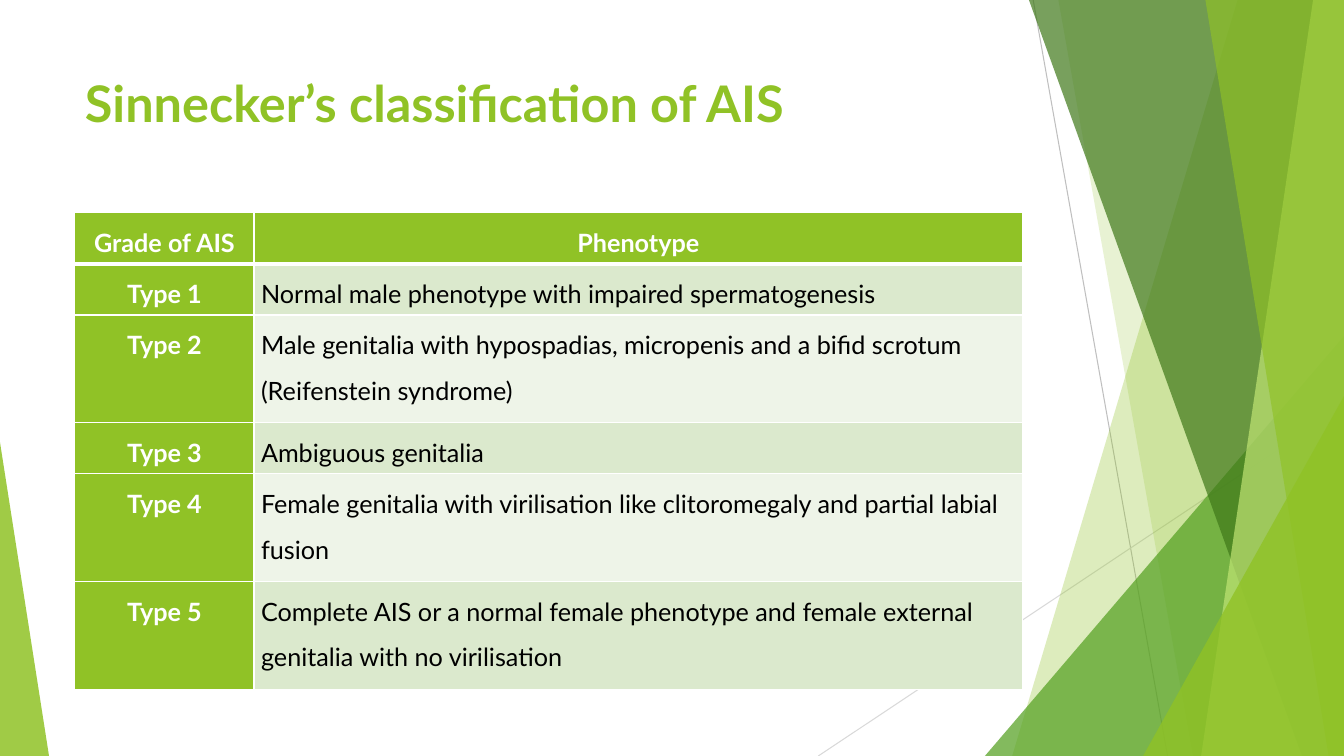
from dataclasses import dataclass
from lxml import etree
from pptx import Presentation
from pptx.dml.color import RGBColor
from pptx.enum.shapes import MSO_CONNECTOR as CONN, MSO_SHAPE as SHAPE
from pptx.enum.text import MSO_ANCHOR as ANCHOR, PP_ALIGN as ALIGN
from pptx.oxml.ns import qn
from pptx.util import Pt


@dataclass(frozen=True)
class Theme:
    font: str = "Lato"
    title_size: int = 36
    body_size: int = 18
    lime: str = "90C226"
    green: str = "54A021"
    forest: str = "3F7819"
    pale_lime: str = "C0E474"
    band_dark: str = "DBE9CD"
    band_light: str = "EEF4E8"
    ray_dark: str = "BFBFBF"
    ray_light: str = "D9D9D9"
    white: str = "FFFFFF"
    black: str = "000000"


THEME = Theme()

ROWS = [
    ("Grade of AIS", "Phenotype"),
    ("Type 1", "Normal male phenotype with impaired spermatogenesis"),
    ("Type 2", "Male genitalia with hypospadias, micropenis and a bifid scrotum "
               "(Reifenstein syndrome)"),
    ("Type 3", "Ambiguous genitalia"),
    ("Type 4", "Female genitalia with virilisation like clitoromegaly and partial "
               "labial fusion"),
    ("Type 5", "Complete AIS or a normal female phenotype and female external "
               "genitalia with no virilisation"),
]
TALL_ROWS = (2, 4, 5)


def paint(sp, color, opacity):
    sp.shadow.inherit = False
    sp.line.fill.background()
    sp.fill.solid()
    sp.fill.fore_color.rgb = RGBColor.from_string(color)
    clr = sp.fill._xPr.find(qn("a:solidFill"))[0]
    etree.SubElement(clr, qn("a:alpha"), val=str(opacity * 1000))


def format_text(tf, size, color, bold):
    for p in tf.paragraphs:
        for r in p.runs:
            r.font.name = THEME.font
            r.font.size = Pt(size)
            r.font.bold = bold
            r.font.color.rgb = RGBColor.from_string(color)


def add_ray(slide, start, end, color):
    line = slide.shapes.add_connector(CONN.STRAIGHT, *map(Pt, start + end))
    line.line.color.rgb = RGBColor.from_string(color)
    line.line.width = Pt(0.75)
    etree.SubElement(line._element.spPr, qn("a:effectLst"))


def add_shard(slide, box, top_x, bottom_x, color, opacity):
    x, y, w, h = box
    right, bottom = x + w, y + h
    builder = slide.shapes.build_freeform(x + top_x, y, scale=Pt(1))
    builder.add_line_segments([(right, y), (right, bottom), (x + bottom_x, bottom)])
    paint(builder.convert_to_shape(), color, opacity)


def add_corner(slide, box, w, h, apex, color, opacity):
    x, y, box_w, box_h = box
    left = x + (box_w - w) * apex
    sp = slide.shapes.add_shape(SHAPE.ISOSCELES_TRIANGLE, Pt(left),
                                Pt(y + box_h - h), Pt(w), Pt(h))
    sp.adjustments[0] = apex
    paint(sp, color, opacity)


def add_facets(slide, box):
    x, y, w, h = box
    add_ray(slide, (x + 738, y), (x + 834, y + h), THEME.ray_dark)
    add_ray(slide, (x + w, y + 290), (x + 584.5, y + h), THEME.ray_light)
    add_shard(slide, box, 884, 723, THEME.lime, 30)
    add_shard(slide, box, 756, 852, THEME.lime, 20)
    add_corner(slide, box, 256.5, 300, 1, THEME.green, 72)
    add_shard(slide, box, 735, 929.5, THEME.forest, 70)
    add_shard(slide, box, 938, 858, THEME.pale_lime, 70)
    add_shard(slide, box, 861, 949, THEME.lime, 65)
    add_corner(slide, box, 143.5, 257, 1, THEME.lime, 80)
    add_corner(slide, box, 35, 224, 0, THEME.lime, 85)


def add_title(slide, box):
    sp = slide.shapes.title
    sp.left, sp.top, sp.width, sp.height = map(Pt, box)
    tf = sp.text_frame
    tf.text = "Sinnecker’s classification of AIS"
    tf.word_wrap = True
    tf.vertical_anchor = ANCHOR.TOP
    tf.paragraphs[0].alignment = ALIGN.LEFT
    format_text(tf, THEME.title_size, THEME.lime, True)


def add_borders(cell, is_header, below_header):
    widths = {"L": 1, "R": 1, "T": 3 if below_header else 1, "B": 3 if is_header else 1}
    tcPr = cell._tc.get_or_add_tcPr()
    for i, (side, width) in enumerate(widths.items()):
        ln = etree.Element(qn(f"a:ln{side}"), w=str(Pt(width)))
        fill = etree.SubElement(ln, qn("a:solidFill"))
        etree.SubElement(fill, qn("a:srgbClr"), val=THEME.white)
        tcPr.insert(i, ln)


def fill_cell(cell, text, row, col):
    is_label = row == 0 or col == 0
    band = THEME.band_dark if row % 2 else THEME.band_light
    cell.fill.solid()
    cell.fill.fore_color.rgb = RGBColor.from_string(THEME.lime if is_label else band)
    cell.margin_left = cell.margin_right = Pt(5)
    cell.margin_top = cell.margin_bottom = Pt(0)
    tf = cell.text_frame
    tf.text = text
    p = tf.paragraphs[0]
    p.alignment = ALIGN.CENTER if is_label else ALIGN.LEFT
    p.line_spacing = 1.5
    format_text(tf, THEME.body_size, THEME.white if is_label else THEME.black, is_label)
    add_borders(cell, row == 0, row == 1)


def add_grades(slide, box):
    x, y, w, h = box
    label_w, short_h, tall_h = 128, 36.5, 77
    table = slide.shapes.add_table(len(ROWS), 2, *map(Pt, box)).table
    table.columns[0].width = Pt(label_w)
    table.columns[1].width = Pt(w - label_w)
    for row, texts in enumerate(ROWS):
        table.rows[row].height = Pt(tall_h if row in TALL_ROWS else short_h)
        for col, text in enumerate(texts):
            fill_cell(table.cell(row, col), text, row, col)


def main():
    prs = Presentation()
    prs.slide_width, prs.slide_height = Pt(960), Pt(540)
    slide = prs.slides.add_slide(prs.slide_layouts[5])
    add_facets(slide, (0, 0, 960, 540))
    add_title(slide, (53.5, 48, 677, 104))
    add_grades(slide, (53.5, 152, 677, 340.5))
    prs.save("out.pptx")


if __name__ == "__main__":
    main()
